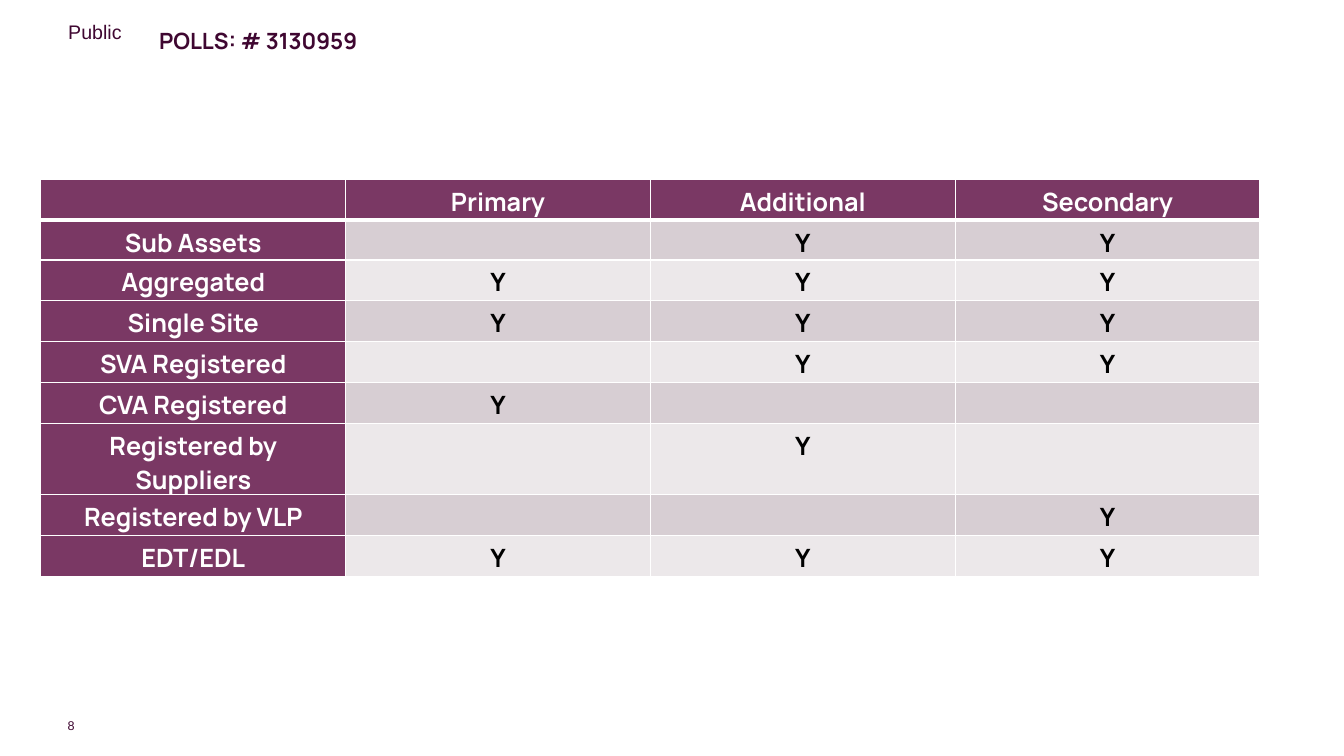
import pptx
import pptx.dml.color
import pptx.enum.text
import pptx.oxml
import pptx.oxml.ns
import pptx.util
from pptx.util import Cm

PLUM, DARK, WHITE, BLACK = "7A3864", "3F0731", "FFFFFF", "000000"
BANDS = ("D7CED3", "ECE8EA")
HEADERS = ("", "Primary", "Additional", "Secondary")
ROWS = (
    ("Sub Assets", "", "Y", "Y"),
    ("Aggregated", "Y", "Y", "Y"),
    ("Single Site", "Y", "Y", "Y"),
    ("SVA Registered", "", "Y", "Y"),
    ("CVA Registered", "Y", "", ""),
    ("Registered by Suppliers", "", "Y", ""),
    ("Registered by VLP", "", "", "Y"),
    ("EDT/EDL", "Y", "Y", "Y"),
)
ROW_HEIGHTS = (1.02, 1.0, 1.03, 1.03, 1.03, 1.03, 1.79, 1.03, 1.03)
ALIGN = pptx.enum.text.PP_ALIGN


def rgb(color):
    return pptx.dml.color.RGBColor.from_string(color)


def add_run(p, text, size, font, color, bold=False):
    r = p.add_run()
    r.text = text
    r.font.size = pptx.util.Pt(size)
    r.font.name = font
    r.font.bold = bold
    r.font.color.rgb = rgb(color)


def add_label(s, text, box, size, font, color, bold=False):
    sp = s.shapes.add_textbox(*(Cm(v) for v in box))
    tf = sp.text_frame
    tf.word_wrap = True
    add_run(tf.paragraphs[0], text, size, font, color, bold)
    return tf


def add_page_number(s, text):
    tf = add_label(s, text, (1.5, 18.08, 0.38, 0.38), 9, "Arial", DARK)
    tf.word_wrap = False
    tf.margin_left = tf.margin_top = tf.margin_right = tf.margin_bottom = 0
    tf.vertical_anchor = pptx.enum.text.MSO_ANCHOR.MIDDLE
    tf.paragraphs[0].alignment = ALIGN.RIGHT


def set_borders(cell, widths):
    tc_pr = cell._tc.get_or_add_tcPr()
    for i, (side, width) in enumerate(widths.items()):
        tc_pr.insert(i, pptx.oxml.parse_xml(
            f'<a:{side} {pptx.oxml.ns.nsdecls("a")} w="{pptx.util.Pt(width)}">'
            f'<a:solidFill><a:srgbClr val="{WHITE}"/></a:solidFill></a:{side}>'))


def fill_cell(cell, text, fill, color, widths):
    cell.fill.solid()
    cell.fill.fore_color.rgb = rgb(fill)
    cell.margin_bottom = 0
    set_borders(cell, widths)
    p = cell.text_frame.paragraphs[0]
    p.alignment = ALIGN.CENTER
    if text:
        add_run(p, text, 18, "Manrope", color, True)
    else:
        p.font.size = pptx.util.Pt(18)


def add_matrix(s):
    grid = (HEADERS,) + ROWS
    frame = s.shapes.add_table(len(grid), len(HEADERS), Cm(1.03), Cm(4.53),
                               Cm(30.72), Cm(sum(ROW_HEIGHTS)))
    table = frame.table
    for column in table.columns:
        column.width = Cm(7.68)
    for i, (values, height) in enumerate(zip(grid, ROW_HEIGHTS)):
        table.rows[i].height = Cm(height)
        widths = {"lnL": 1, "lnR": 1, "lnT": 3 if i == 1 else 1,
                  "lnB": 3 if i == 0 else 1}
        for j, text in enumerate(values):
            heading = i == 0 or j == 0
            fill = PLUM if heading else BANDS[(i - 1) % 2]
            fill_cell(table.cell(i, j), text, fill,
                      WHITE if heading else BLACK, widths)


def main():
    prs = pptx.Presentation()
    prs.slide_width, prs.slide_height = Cm(33.87), Cm(19.05)
    s = prs.slides.add_slide(prs.slide_layouts[6])
    add_page_number(s, "8")
    add_label(s, "Public", (1.47, 0.38, 12.7, 0.86), 14, "Arial", DARK)
    add_matrix(s)
    add_label(s, "POLLS: # 3130959", (3.76, 0.56, 5.69, 0.94), 16, "Manrope",
              DARK, True)
    prs.save("out.pptx")


if __name__ == "__main__":
    main()
